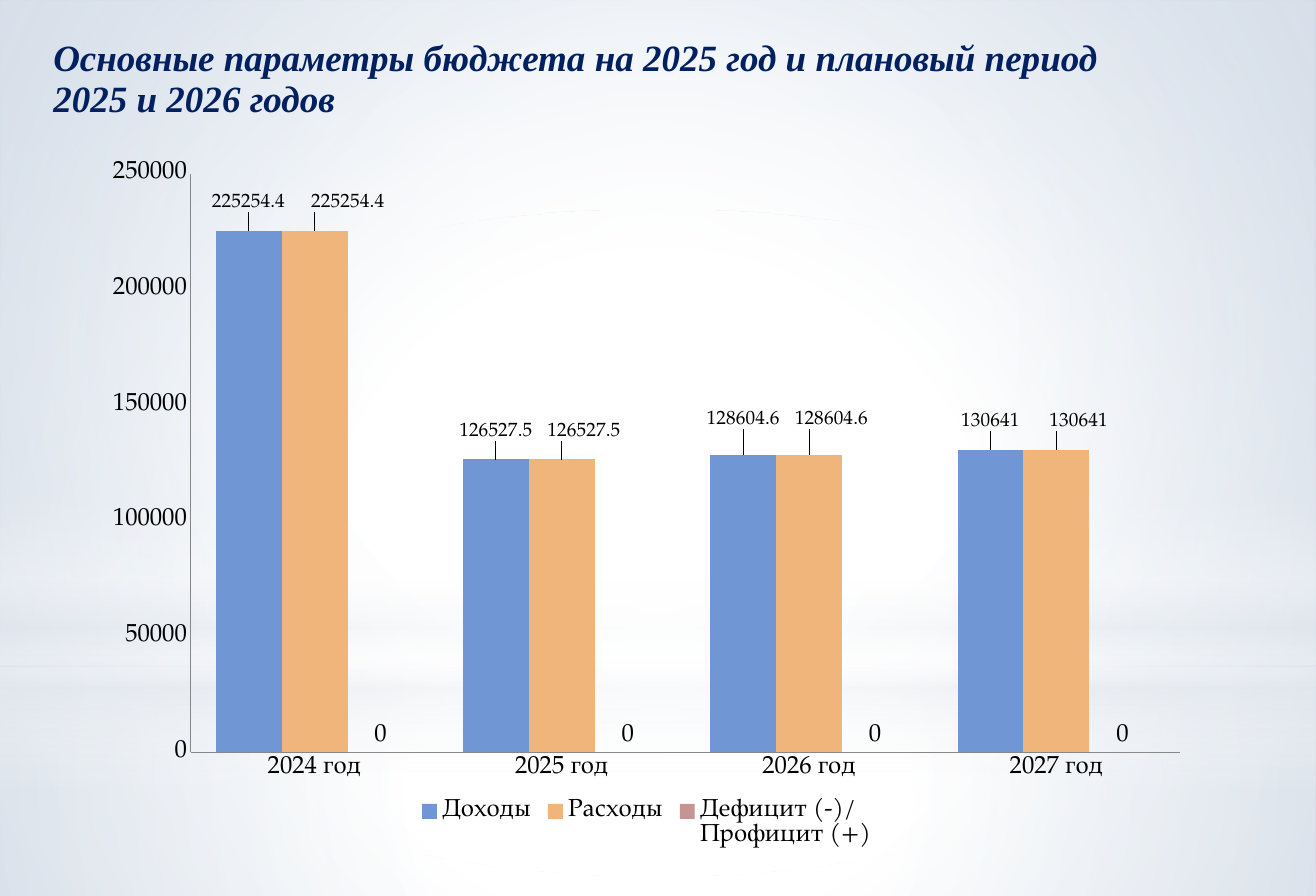
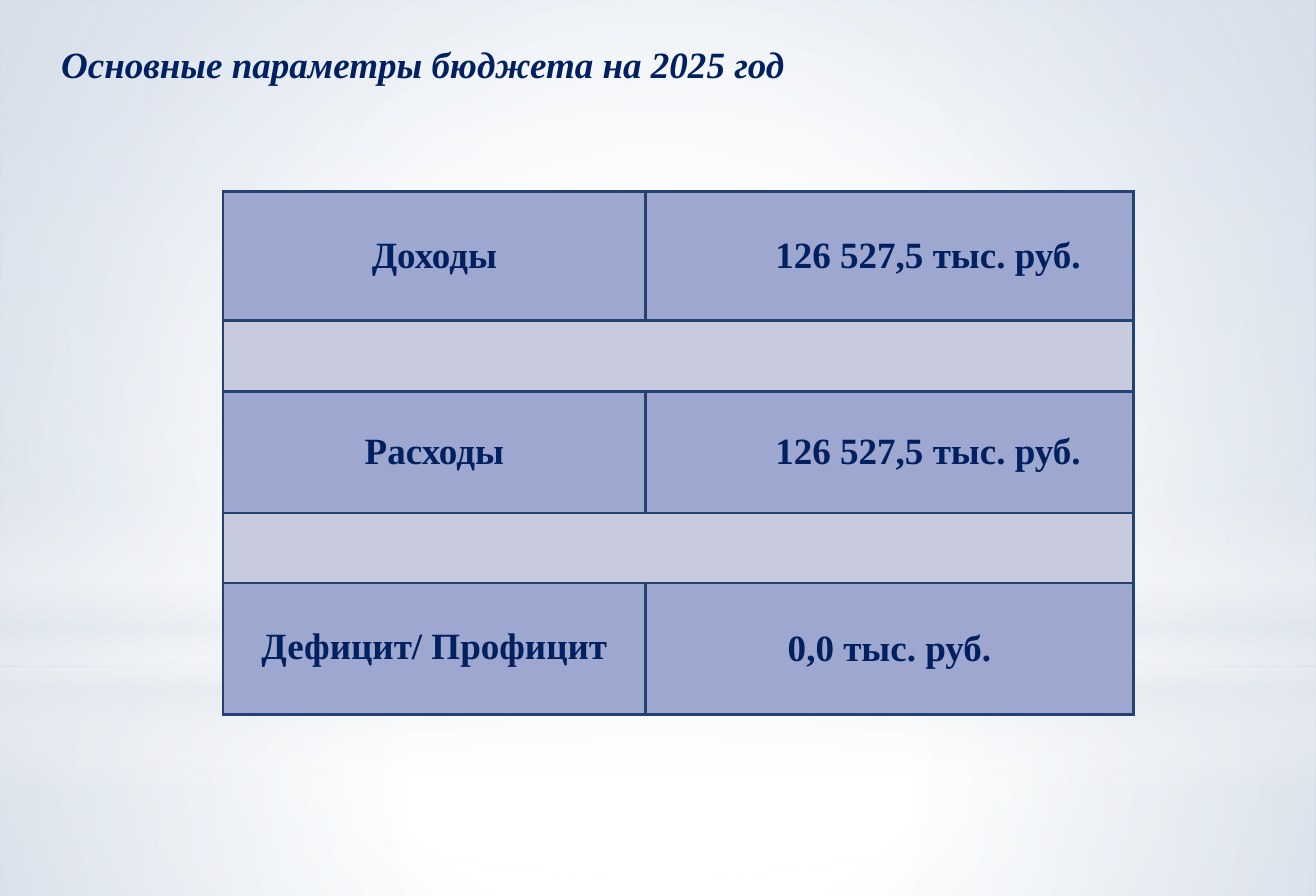
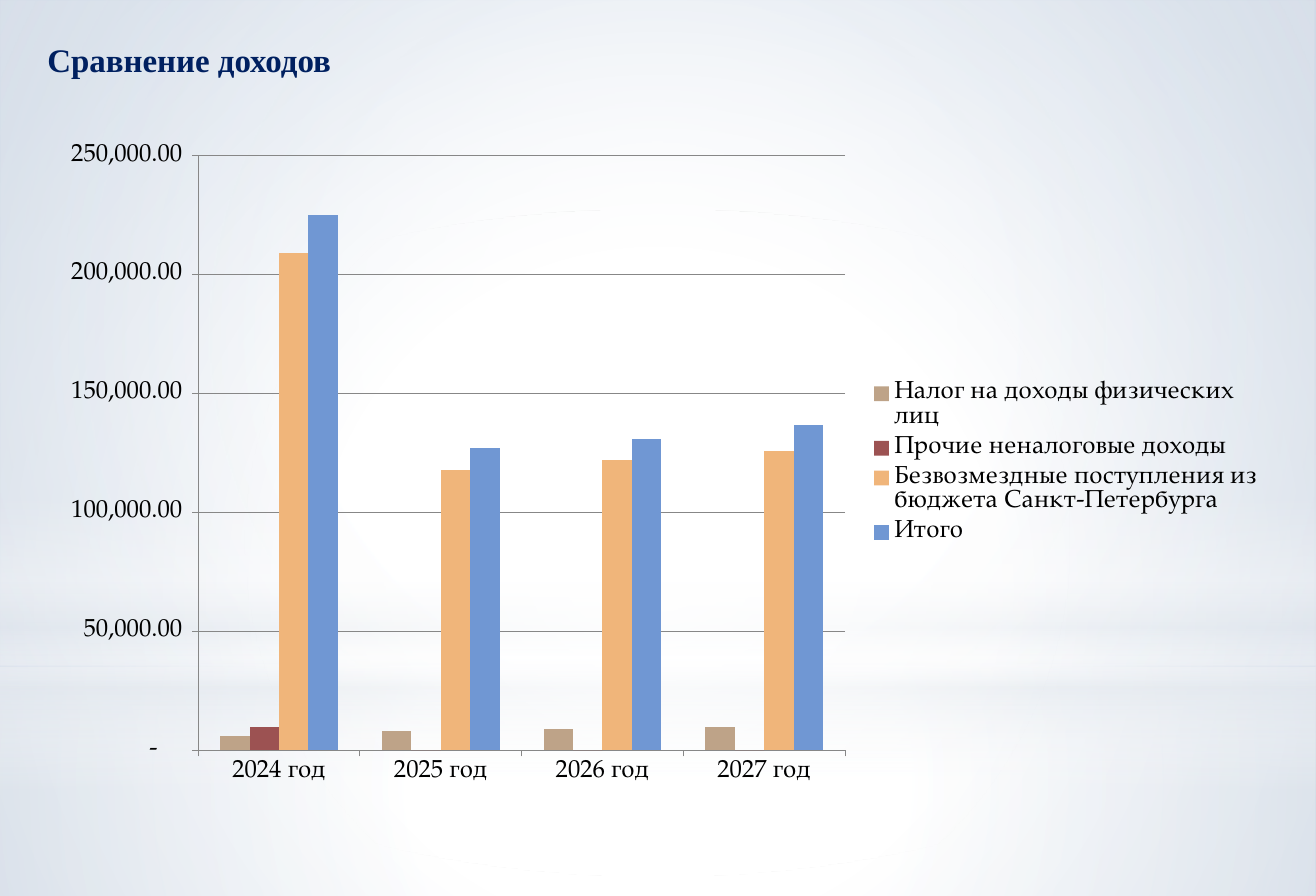
from dataclasses import dataclass

from lxml import etree
from pptx import Presentation
from pptx.chart.data import CategoryChartData
from pptx.dml.color import RGBColor
from pptx.enum.chart import XL_CHART_TYPE, XL_LABEL_POSITION, XL_LEGEND_POSITION, XL_TICK_MARK
from pptx.enum.shapes import MSO_SHAPE
from pptx.enum.text import MSO_ANCHOR, PP_ALIGN
from pptx.oxml import parse_xml
from pptx.oxml.ns import nsdecls, qn
from pptx.util import Inches, Pt

CLUSTER = XL_CHART_TYPE.COLUMN_CLUSTERED
ABOVE = XL_LABEL_POSITION.OUTSIDE_END
BOTTOM, RIGHT = XL_LEGEND_POSITION.BOTTOM, XL_LEGEND_POSITION.RIGHT
NO_TICK, TICK = XL_TICK_MARK.NONE, XL_TICK_MARK.OUTSIDE
RECT, OVAL = MSO_SHAPE.RECTANGLE, MSO_SHAPE.OVAL
LEFT, CENTER = PP_ALIGN.LEFT, PP_ALIGN.CENTER
MIDDLE = MSO_ANCHOR.MIDDLE


@dataclass(frozen=True)
class Theme:
    width: float = 13.33
    height: float = 9.08
    navy: str = "002060"
    black: str = "000000"
    white: str = "FFFFFF"
    mist: str = "E4E9EF"
    sky: str = "AABDD5"
    axis: str = "878787"
    blue: str = "7097D3"
    orange: str = "F0B57A"
    pink: str = "C79494"
    tan: str = "BEA388"
    red: str = "9C5252"
    border: str = "234271"
    cell: str = "9EA7CF"
    band: str = "C8CADF"
    serif: str = "Times New Roman"
    plain: str = "TeX Gyre Pagella"
    title: float = 27
    small: float = 24
    chart: float = 18
    label: float = 14
    rule: float = 2.25


THEME = Theme()


def rgb(code):
    return RGBColor.from_string(code)


def set_font(font, name, size, color, bold=False, italic=False):
    font.name, font.size = name, Pt(size)
    font.bold, font.italic = bold, italic
    font.color.rgb = rgb(color)


def write(frame, text, size=THEME.title, italic=False, align=LEFT, space=None, indent=0):
    para = frame.paragraphs[0]
    para.alignment = align
    if space:
        para.line_spacing = space
    if indent:
        para._p.get_or_add_pPr().set("marL", str(Inches(indent)))
    run = para.add_run()
    run.text = text
    set_font(run.font, THEME.serif, size, THEME.navy, True, italic)


def shade(fill, root, stops, center=None):
    fill.background()
    marks = "".join(
        f'<a:gs pos="{pos * 1000}"><a:srgbClr val="{color}">'
        f'<a:alpha val="{alpha * 1000}"/></a:srgbClr></a:gs>'
        for pos, color, alpha in stops)
    if center:
        sides = " ".join(f'{side}="{part * 1000}"' for side, part in zip("ltrb", center))
        way = f'<a:path path="circle"><a:fillToRect {sides}/></a:path>'
    else:
        way = '<a:lin ang="5400000" scaled="0"/>'
    old = next(root.iter(qn("a:noFill")))
    old.getparent().replace(old, parse_xml(
        f'<a:gradFill {nsdecls("a")} rotWithShape="1"><a:gsLst>{marks}</a:gsLst>{way}</a:gradFill>'))


def place(parent, index, inner=False, **parts):
    old = parent.find(qn("c:layout"))
    if old is not None:
        parent.remove(old)
    layout = etree.Element(qn("c:layout"))
    manual = etree.SubElement(layout, qn("c:manualLayout"))
    if inner:
        etree.SubElement(manual, qn("c:layoutTarget")).set("val", "inner")
    if "w" in parts:
        for mode in ("xMode", "yMode"):
            etree.SubElement(manual, qn(f"c:{mode}")).set("val", "edge")
    for key, value in parts.items():
        etree.SubElement(manual, qn(f"c:{key}")).set("val", str(value))
    parent.insert(index, layout)


class Deck:
    def __init__(self):
        self.file = Presentation()
        self.file.slide_width = Inches(THEME.width)
        self.file.slide_height = Inches(THEME.height)
        self.slide = None

    def add(self):
        self.slide = self.file.slides.add_slide(self.file.slide_layouts[6])

    def backdrop(self):
        white, mist = THEME.white, THEME.mist
        mid = (50, 50, 50, 50)
        master = self.file.slide_master
        shade(master.background.fill, master.element,
              [(0, white, 100), (42, white, 100), (100, THEME.sky, 100)], (24, 44, 24, 12))
        glows = [
            (RECT, 6.76, 2.32, [(0, white, 91), (37, white, 76), (100, mist, 79)], mid),
            (RECT, 0, 6.76, [(0, white, 89), (48, white, 62), (100, mist, 79)], mid),
            (RECT, 4.99, 3.03, [(0, white, 0), (29, white, 30), (45, mist, 40),
                                (55, white, 26), (65, mist, 60), (100, white, 0)], None),
            (OVAL, 2.12, 6.76, [(0, white, 100), (56, white, 0)], mid),
        ]
        for number, (kind, top, height, stops, center) in enumerate(glows, 20):
            glow = self.slide.shapes.add_shape(
                kind, 0, Inches(top), Inches(THEME.width), Inches(height))
            shade(glow.fill, glow.element, stops, center)
            glow.line.fill.background()
            glow.shadow.inherit = False
            glow.element.nvSpPr.cNvPr.set("id", str(number))
            master.shapes.element.append(glow.element)

    def title(self, text, box, wrap=False, **form):
        frame = self.slide.shapes.add_textbox(*map(Inches, box)).text_frame
        frame.margin_left = frame.margin_right = frame.margin_top = frame.margin_bottom = 0
        frame.word_wrap = wrap
        write(frame, text, **form)

    def chart(self, box, cats, rows, gap, tick, side, plot, key, grid=False, style="General"):
        data = CategoryChartData()
        data.categories = cats
        for name, _, values in rows:
            data.add_series(name, values)
        chart = self.slide.shapes.add_chart(CLUSTER, *map(Inches, box), data).chart
        set_font(chart.font, THEME.plain, THEME.chart, THEME.black)
        chart.has_title = False
        bars = chart.plots[0]
        bars.gap_width, bars.overlap, bars.vary_by_categories = gap, 0, False
        for series, (_, color, _) in zip(bars.series, rows):
            series.format.fill.solid()
            series.format.fill.fore_color.rgb = rgb(color)
            series.invert_if_negative = False
        for axis in (chart.category_axis, chart.value_axis):
            axis.major_tick_mark, axis.minor_tick_mark = tick, NO_TICK
            axis.format.line.color.rgb = rgb(THEME.axis)
            axis.format.line.width = Pt(0.75)
        scale = chart.value_axis
        scale.minimum_scale, scale.maximum_scale, scale.major_unit = 0, 250000, 50000
        scale.tick_labels.number_format = style
        scale.tick_labels.number_format_is_linked = False
        scale.has_major_gridlines = grid
        if grid:
            scale.major_gridlines.format.line.color.rgb = rgb(THEME.axis)
        chart.has_legend = True
        chart.legend.position = side
        chart.legend.include_in_layout = False
        place(chart.element.find(".//" + qn("c:plotArea")), 0, True, **plot)
        place(chart.legend.element if hasattr(chart.legend, "element")
              else chart.element.find(".//" + qn("c:legend")), 1, **key)
        return bars.series

    def labels(self, series, size, shifts=()):
        tags = series.data_labels
        tags.show_value, tags.position = True, ABOVE
        set_font(tags.font, THEME.plain, size, THEME.black)
        for number in range(len(shifts)):
            tag = series.points[number].data_label
            set_font(tag.font, THEME.plain, size, THEME.black)
            tag.position = ABOVE
        found = chart_tags(series)
        for tag, (x, y) in zip(found, shifts):
            place(tag, 1, x=x, y=y)

    def table(self, spot, cols, rows):
        heights = [height for height, _ in rows]
        box = (*spot, sum(cols), sum(heights))
        table = self.slide.shapes.add_table(len(rows), len(cols), *map(Inches, box)).table
        table.first_row = table.horz_banding = False
        for col, width in zip(table.columns, cols):
            col.width = Inches(width)
        for number, (height, cells) in enumerate(rows):
            table.rows[number].height = Inches(height)
            if not cells:
                table.cell(number, 0).merge(table.cell(number, len(cols) - 1))
            for spot in range(len(cols)):
                cell = table.cell(number, spot)
                self.cell(cell, THEME.cell if cells else THEME.band)
                if cells:
                    text, form = cells[spot]
                    write(cell.text_frame, text, align=CENTER, **form)

    def cell(self, cell, color):
        cell.margin_left = cell.margin_right = cell.margin_top = cell.margin_bottom = 0
        cell.vertical_anchor = MIDDLE
        cell.fill.solid()
        cell.fill.fore_color.rgb = rgb(color)
        props = cell._tc.get_or_add_tcPr()
        for index, side in enumerate("RTB" if cell.is_spanned else "LRTB"):
            props.insert(index, parse_xml(
                f'<a:ln{side} {nsdecls("a")} w="{Pt(THEME.rule)}"><a:solidFill>'
                f'<a:srgbClr val="{THEME.border}"/></a:solidFill></a:ln{side}>'))


def chart_tags(series):
    return list(series._element.iter(qn("c:dLbl")))


def main():
    deck = Deck()
    years = [f"{year} год" for year in range(2024, 2028)]
    budget = [225254.4, 126527.5, 128604.6, 130641]

    deck.add()
    deck.backdrop()
    deck.title("Основные параметры бюджета на 2025 год и плановый период 2025 и 2026 годов",
               (0.54, 0.39, 11.27, 0.74), wrap=True, italic=True, space=0.93)
    income, costs, balance = deck.chart(
        (0.92, 1.47, 11.26, 7.24), years,
        [("Доходы", THEME.blue, budget),
         ("Расходы", THEME.orange, budget),
         ("Дефицит (-)/\nПрофицит (+)", THEME.pink, [0] * 4)],
        75, NO_TICK, BOTTOM,
        dict(x=0.09, y=0.04, w=0.89, h=0.81), dict(x=0.29, y=0.91, w=0.42, h=0.08))
    rises = [-0.02, -0.02, -0.03, -0.02]
    deck.labels(income, THEME.label, [(0, rise) for rise in rises])
    deck.labels(costs, THEME.label, list(zip([0.03, 0.02, 0.02, 0.02], rises)))
    deck.labels(balance, THEME.chart)

    deck.add()
    deck.title("Основные параметры бюджета на 2025 год", (0.62, 0.42, 7.83, 0.44), italic=True)
    total = ("126 527,5 тыс. руб.", dict(indent=0.78))
    deck.table((2.26, 1.94), [4.28, 4.94], [
        (1.31, [("Доходы", {}), total]),
        (0.72, []),
        (1.23, [("Расходы", {}), total]),
        (0.71, []),
        (1.33, [("Дефицит/ Профицит", dict(space=0.86)), ("0,0 тыс. руб.", {})]),
    ])

    deck.add()
    deck.title("Сравнение доходов", (0.48, 0.4, 3.1, 0.44), size=THEME.small)
    deck.chart(
        (0.37, 1.31, 12.6, 6.77), years,
        [("Налог на доходы физических лиц", THEME.tan, [6000, 8000, 9000, 10000]),
         ("Прочие неналоговые доходы", THEME.red, [10000, 0, 0, 0]),
         ("Безвозмездные поступления из \nбюджета Санкт-Петербурга", THEME.orange,
          [209000, 118000, 122000, 126000]),
         ("Итого", THEME.blue, [225000, 127000, 131000, 137000])],
        150, TICK, RIGHT,
        dict(x=0.13, y=0.04, w=0.52, h=0.89), dict(x=0.67, y=0.37, w=0.32, h=0.26),
        grid=True, style='_(* #,##0.00_);_(* \\(#,##0.00\\);_(* "-"??_);_(@_)')

    deck.file.save("out.pptx")


if __name__ == "__main__":
    main()
